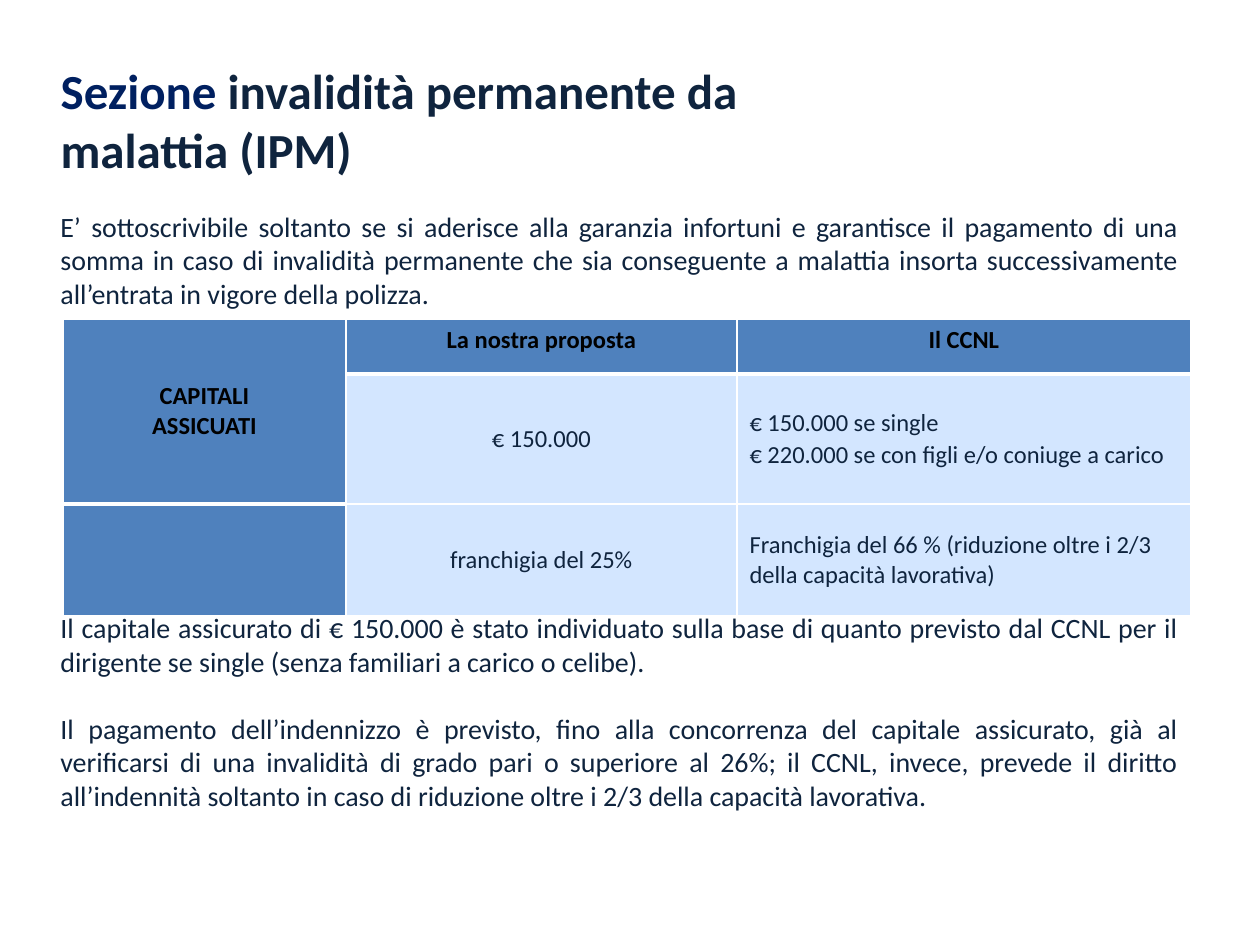
from lxml import etree
from pptx import Presentation
from pptx.dml.color import RGBColor
from pptx.enum.text import MSO_ANCHOR, MSO_AUTO_SIZE, PP_ALIGN
from pptx.oxml.ns import qn
from pptx.util import Emu, Pt

LEFT, CENTER, JUSTIFY = PP_ALIGN.LEFT, PP_ALIGN.CENTER, PP_ALIGN.JUSTIFY
TOP, MIDDLE = MSO_ANCHOR.TOP, MSO_ANCHOR.MIDDLE
PX = 914400 // 126  # EMU in one px
FONT = "Calibri"
COLORS = {"navy": "002060", "ink": "0F243E", "black": "000000",
          "header": "4F81BD", "cell": "D3E6FF", "border": "FFFFFF"}

# Content
TITLE = [("Sezione", "navy"), (" invalidità permanente da malattia (IPM)", "ink")]
# Each paragraph with the space before it in points; the first gap holds the table
BODY = [
    (0, "E’ sottoscrivibile soltanto se si aderisce alla garanzia infortuni e "
        "garantisce il pagamento di una somma in caso di invalidità permanente che "
        "sia conseguente a malattia insorta successivamente all’entrata in vigore "
        "della polizza."),
    (172, "Il capitale assicurato di € 150.000 è stato individuato sulla base di "
          "quanto previsto dal CCNL per il dirigente se single (senza familiari a "
          "carico o celibe)."),
    (19, "Il pagamento dell’indennizzo è previsto, fino alla concorrenza del capitale "
         "assicurato, già al verificarsi di una invalidità di grado pari o superiore "
         "al 26%; il CCNL, invece, prevede il diritto all’indennità soltanto in caso "
         "di riduzione oltre i 2/3 della capacità lavorativa."),
]
ROWS = [
    [["CAPITALI", "ASSICUATI"], ["La nostra proposta"], ["Il CCNL"]],
    [[], ["€ 150.000"],
     ["€ 150.000 se single", "€ 220.000 se con figli e/o coniuge a carico"]],
    [[], ["franchigia del 25%"],
     ["Franchigia del 66 % (riduzione oltre i 2/3 della capacità lavorativa)"]],
]

# Places in px: left, top, width, height
TITLE_AT = (48, 54, 756, 170)
BODY_AT = (48, 203, 1143, 624)
TABLE_AT = (63, 319)
COLUMN_WIDTHS = (283, 391, 454)
ROW_HEIGHTS = (55, 130, 112)


def px(*lengths):
    return [Emu(length * PX) for length in lengths]


def color(name):
    return RGBColor.from_string(COLORS[name])


def style(font, size, name, bold=False):
    font.name, font.size, font.bold = FONT, Pt(size), bold
    font.color.rgb = color(name)


def set_borders(cell, widths):
    properties = cell._tc.get_or_add_tcPr()
    for index, (side, width) in enumerate(widths.items()):
        line = etree.Element(qn(f"a:ln{side}"), w=str(Pt(width)))
        fill = etree.SubElement(line, qn("a:solidFill"))
        etree.SubElement(fill, qn("a:srgbClr"), val=COLORS["border"])
        properties.insert(index, line)


deck = Presentation()
deck.slide_width, deck.slide_height = px(1260, 945)
page = deck.slides.add_slide(deck.slide_layouts[5])

# Title
title = page.shapes.title
title.left, title.top, title.width, title.height = px(*TITLE_AT)
frame = title.text_frame
frame.word_wrap, frame.auto_size = True, MSO_AUTO_SIZE.NONE
frame.vertical_anchor = TOP
heading = frame.paragraphs[0]
heading.alignment = LEFT
for text, name in TITLE:
    span = heading.add_run()
    span.text = text
    style(span.font, 28, name, bold=True)

# Body text, above and below the table
box = page.shapes.add_textbox(*px(*BODY_AT))
frame = box.text_frame
frame.word_wrap = True
for index, (gap, text) in enumerate(BODY):
    para = frame.add_paragraph() if index else frame.paragraphs[0]
    para.text, para.alignment = text, JUSTIFY
    if gap:
        para.space_before = Pt(gap)
    style(para.font, 16, "ink")

# Table of insured sums
table = page.shapes.add_table(
    len(ROWS), len(COLUMN_WIDTHS),
    *px(*TABLE_AT, sum(COLUMN_WIDTHS), sum(ROW_HEIGHTS))).table
table.first_row = table.horz_banding = False
for column, width in zip(table.columns, px(*COLUMN_WIDTHS)):
    column.width = width
for row, height in zip(table.rows, px(*ROW_HEIGHTS)):
    row.height = height
table.cell(0, 0).merge(table.cell(1, 0))

for r, row in enumerate(ROWS):
    for c, lines in enumerate(row):
        cell = table.cell(r, c)
        is_header = r == 0 or c == 0
        # The thick rule lies under the header cells, the merged one included
        rule_row = 1 if c == 0 else 0
        set_borders(cell, {"L": 1, "R": 1, "T": 3 if r == rule_row + 1 else 1,
                           "B": 3 if r == rule_row else 1})
        cell.fill.solid()
        cell.fill.fore_color.rgb = color("header" if is_header else "cell")
        cell.vertical_anchor = TOP if r == 0 and c else MIDDLE
        for index, text in enumerate(lines):
            frame = cell.text_frame
            para = frame.add_paragraph() if index else frame.paragraphs[0]
            para.text = text
            para.alignment = CENTER if is_header or c == 1 else LEFT
            para.space_after = Pt(0 if is_header else 1)
            style(para.font, 14, "black" if is_header else "ink", bold=is_header)

deck.save("out.pptx")
